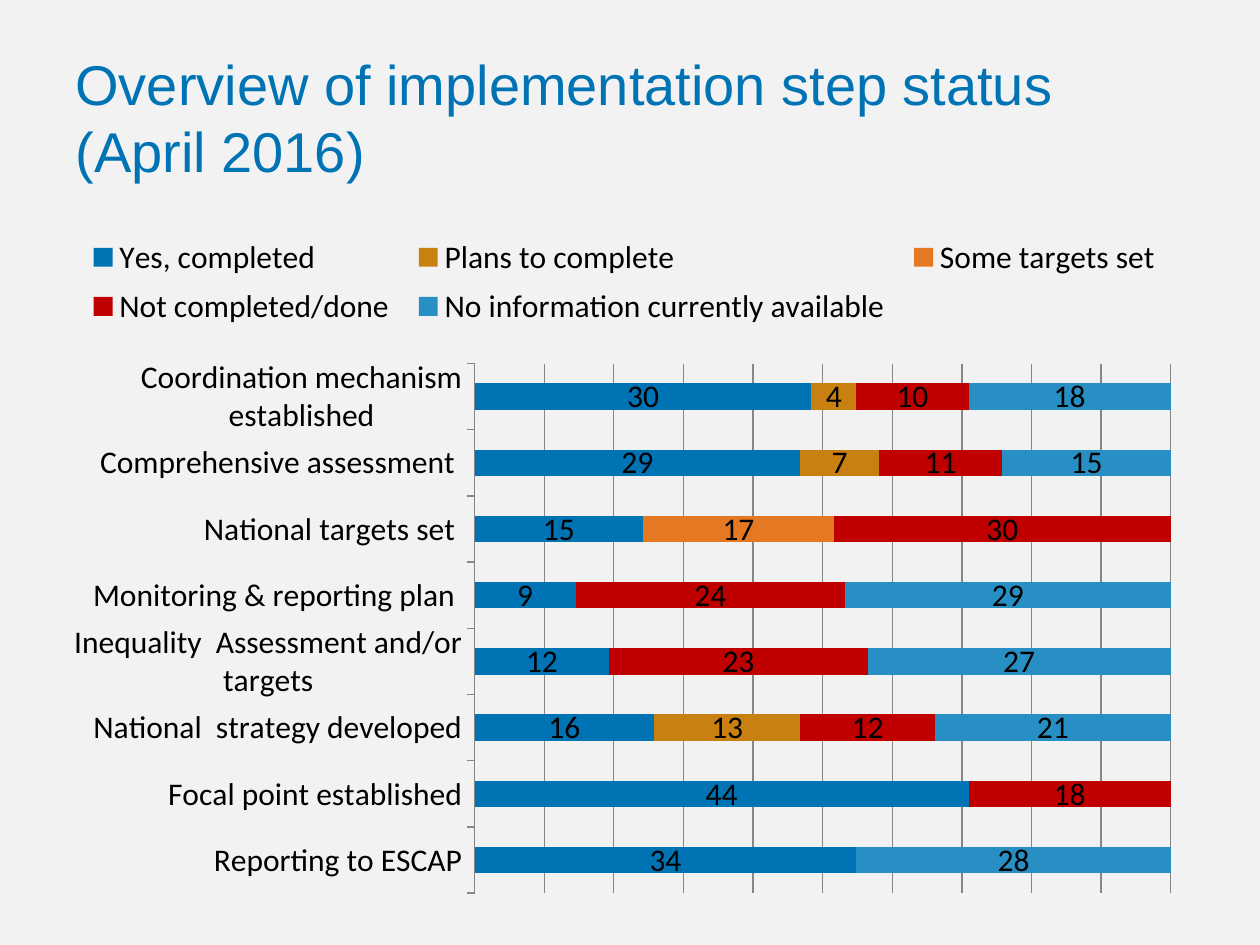
from lxml import etree
from pptx import Presentation
from pptx.chart.data import CategoryChartData
from pptx.dml.color import RGBColor
from pptx.enum.chart import XL_CHART_TYPE as ChartType
from pptx.enum.chart import XL_LABEL_POSITION as LabelPos
from pptx.enum.chart import XL_LEGEND_POSITION as LegendPos
from pptx.enum.chart import XL_TICK_MARK as TickMark
from pptx.enum.text import MSO_ANCHOR
from pptx.oxml.ns import qn
from pptx.util import Inches, Pt

BACKGROUND = RGBColor(0xF2, 0xF2, 0xF2)
BLUE = RGBColor(0x00, 0x73, 0xB5)
OCHRE = RGBColor(0xC8, 0x80, 0x10)
ORANGE = RGBColor(0xE4, 0x78, 0x23)
RED = RGBColor(0xC0, 0x00, 0x00)
LIGHT_BLUE = RGBColor(0x28, 0x8F, 0xC4)
BLACK = RGBColor(0x00, 0x00, 0x00)
GRAY = RGBColor(0x86, 0x86, 0x86)

STEPS = [
    "Coordination mechanism established",
    "Comprehensive assessment ",
    "National targets set ",
    "Monitoring & reporting plan ",
    "Inequality  Assessment and/or targets",
    "National  strategy developed",
    "Focal point established",
    "Reporting to ESCAP",
]
STATUSES = [
    ("Yes, completed", BLUE, [30, 29, 15, 9, 12, 16, 44, 34]),
    ("Plans to complete", OCHRE, [4, 7, None, None, None, 13, None, None]),
    ("Some targets set", ORANGE, [None, None, 17] + [None] * 5),
    ("Not completed/done", RED, [10, 11, 30, 24, 23, 12, 18, None]),
    ("No information currently available", LIGHT_BLUE,
     [18, 15, None, 29, 27, 21, None, 28]),
]


def set_layout(parent, index, x, y, w, h, inner=False):
    """Place a chart part by fractions of the chart's size."""
    for old in parent.findall(qn("c:layout")):
        parent.remove(old)
    layout = etree.Element(qn("c:layout"))
    manual = etree.SubElement(layout, qn("c:manualLayout"))
    values = [("xMode", "edge"), ("yMode", "edge"),
              ("x", x), ("y", y), ("w", w), ("h", h)]
    if inner:
        values.insert(0, ("layoutTarget", "inner"))
    for tag, value in values:
        etree.SubElement(manual, qn(f"c:{tag}")).set("val", str(value))
    parent.insert(index, layout)


def add_title(slide, left, top, width, height):
    tf = slide.shapes.add_textbox(left, top, width, height).text_frame
    tf.word_wrap = True
    tf.vertical_anchor = MSO_ANCHOR.MIDDLE
    p = tf.paragraphs[0]
    p.text = "Overview of implementation step status (April 2016)"
    p.font.name = "Arial"
    p.font.size = Pt(32)
    p.font.color.rgb = BLUE


def add_status_chart(slide, left, top, width, height):
    data = CategoryChartData()
    data.categories = STEPS
    for name, _, values in STATUSES:
        data.add_series(name, values)
    chart = slide.shapes.add_chart(
        ChartType.BAR_STACKED_100, left, top, width, height, data).chart
    chart.has_title = False
    chart.font.name = "Calibri"
    chart.font.size = Pt(18)
    chart.font.color.rgb = BLACK

    # Bars and their values
    plot = chart.plots[0]
    plot.gap_width = 150
    plot.overlap = 100
    plot.vary_by_categories = False
    for series, (_, color, _) in zip(plot.series, STATUSES):
        series.format.fill.solid()
        series.format.fill.fore_color.rgb = color
        series.data_labels.show_value = True
        series.data_labels.position = LabelPos.CENTER

    # Axes
    steps, share = chart.category_axis, chart.value_axis
    steps.reverse_order = True
    steps.major_tick_mark = TickMark.OUTSIDE
    share.visible = False
    share.minimum_scale, share.maximum_scale = 0, 1
    share.major_unit = 0.1
    share.has_major_gridlines = True
    for line in (steps.format.line, share.major_gridlines.format.line):
        line.color.rgb = GRAY
        line.width = Pt(0.75)

    # Legend above the bars
    chart.has_legend = True
    legend = chart.legend
    legend.position = LegendPos.TOP
    legend.include_in_layout = False
    set_layout(legend._element, 1, 0.01, 0.01, 0.97, 0.16)
    set_layout(plot._element.getparent(), 0, 0.363, 0.21, 0.614, 0.777, inner=True)


def main():
    prs = Presentation()
    prs.slide_width, prs.slide_height = Inches(10), Inches(7.5)
    slide = prs.slides.add_slide(prs.slide_layouts[6])
    slide.background.fill.solid()
    slide.background.fill.fore_color.rgb = BACKGROUND
    add_title(slide, Inches(0.5), Inches(0.3), Inches(8.14), Inches(1.25))
    add_status_chart(slide, Inches(0.5), Inches(1.75), Inches(9), Inches(5.41))
    prs.save("out.pptx")


if __name__ == "__main__":
    main()
